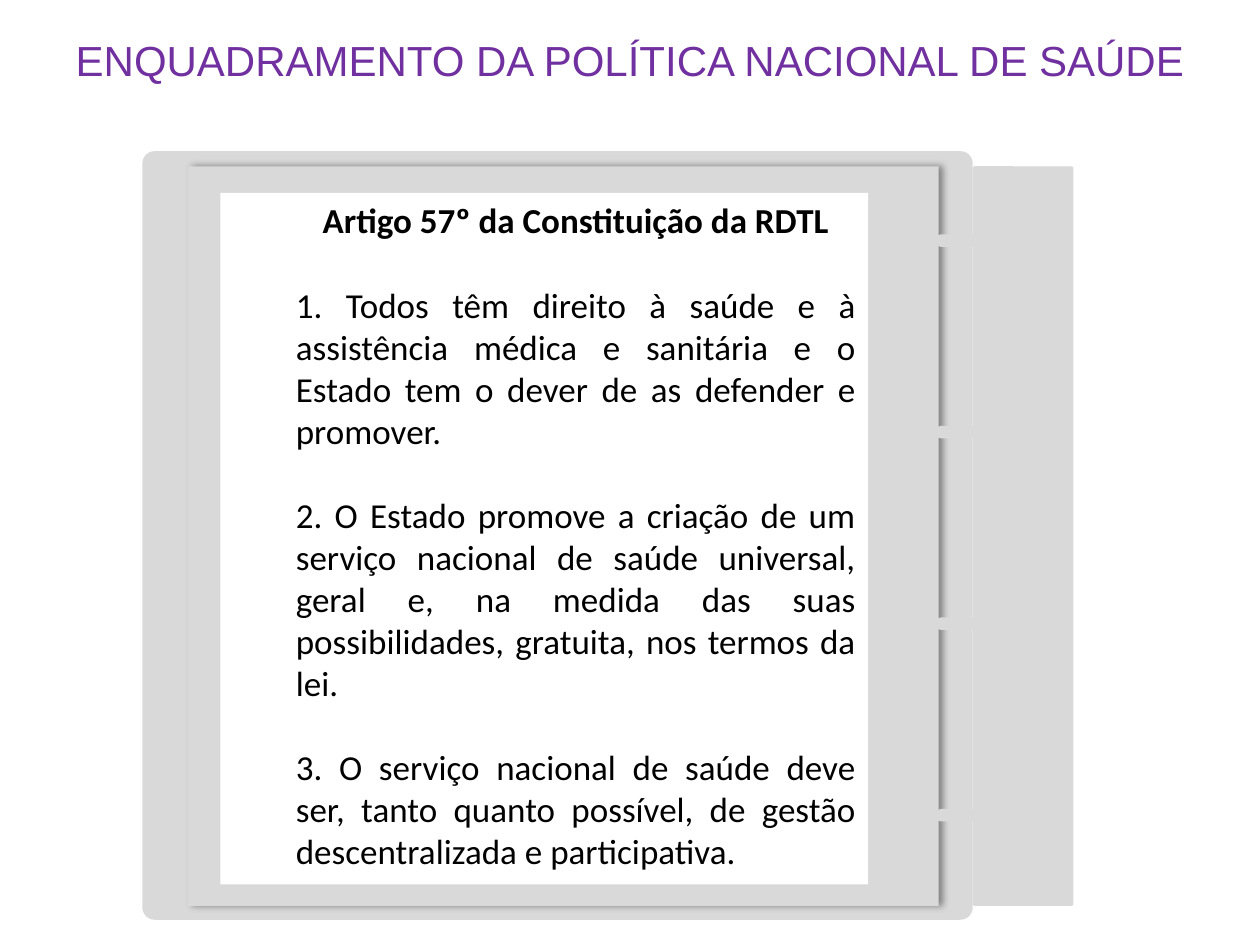
import pptx
import pptx.util
import pptx.dml.color
import pptx.enum.shapes
import pptx.enum.text
import pptx.oxml
import pptx.oxml.ns
from pptx.util import Inches, Pt

GREY = pptx.dml.color.RGBColor(0xD9, 0xD9, 0xD9)
WHITE = pptx.dml.color.RGBColor(0xFF, 0xFF, 0xFF)
BLACK = pptx.dml.color.RGBColor(0x00, 0x00, 0x00)
PURPLE = pptx.dml.color.RGBColor(0x70, 0x30, 0xA0)
RECT = pptx.enum.shapes.MSO_SHAPE.RECTANGLE
ROUNDED = pptx.enum.shapes.MSO_SHAPE.ROUNDED_RECTANGLE
ALIGN = pptx.enum.text.PP_ALIGN


def add_panel(group, kind, x, y, w, h, radius=None):
    sp = group.shapes.add_shape(kind, Inches(x), Inches(y), Inches(w), Inches(h))
    sp.shadow.inherit = False
    sp.fill.solid()
    sp.fill.fore_color.rgb = GREY
    sp.line.fill.background()
    if radius is not None:
        sp.adjustments[0] = radius
    return sp


def make_shadow(blur, dist, angle):
    return pptx.oxml.parse_xml(
        f'<a:outerShdw {pptx.oxml.ns.nsdecls("a")} blurRad="{Pt(blur)}" '
        f'dist="{Pt(dist)}" dir="{angle * 60000}" algn="l" rotWithShape="0">'
        '<a:srgbClr val="000000"><a:alpha val="40000"/></a:srgbClr></a:outerShdw>'
    )


prs = pptx.Presentation()
prs.slide_width = Inches(10)
prs.slide_height = Inches(7.5)
s = prs.slides.add_slide(prs.slide_layouts[5])

notebook = s.shapes.add_group_shape()
add_panel(notebook, ROUNDED, 1.13, 1.2, 6.59, 6.1, 0.016)
page = add_panel(notebook, RECT, 1.49, 1.32, 5.96, 5.87)
page.element.spPr.find(pptx.oxml.ns.qn("a:effectLst")).append(make_shadow(4, 3, 0))

binding = s.shapes.add_group_shape()
add_panel(binding, ROUNDED, 7.72, 1.32, 0.8, 5.87, 0.022)
for i in range(4):
    add_panel(binding, ROUNDED, 7.42, 1.86 + 1.52 * i, 0.8, 0.1, 0.5)

article = [
    ("Artigo 57º da Constituição da RDTL", True, ALIGN.CENTER),
    ("1. Todos têm direito à saúde e à assistência médica e sanitária e o Estado "
     "tem o dever de as defender e promover.", False, ALIGN.JUSTIFY),
    ("2. O Estado promove a criação de um serviço nacional de saúde universal, "
     "geral e, na medida das suas possibilidades, gratuita, nos termos da lei.",
     False, ALIGN.JUSTIFY),
    ("3. O serviço nacional de saúde deve ser, tanto quanto possível, de gestão "
     "descentralizada e participativa.", False, ALIGN.JUSTIFY),
]
sp = s.shapes.add_textbox(Inches(1.75), Inches(1.53), Inches(5.14), Inches(5.49))
sp.fill.solid()
sp.fill.fore_color.rgb = WHITE
tf = sp.text_frame
tf.word_wrap = True
for i, (text, bold, align) in enumerate(article):
    p = tf.paragraphs[0] if i == 0 else tf.add_paragraph()
    p.alignment = align
    p.level = 1
    p.space_before = Pt(24 if i else 0)
    pPr = p._p.get_or_add_pPr()
    pPr.set("marL", str(Inches(0.5)))
    pPr.set("indent", "0")
    r = p.add_run()
    r.text = text
    r.font.size = Pt(20)
    r.font.name = "Calibri"
    r.font.bold = bold
    r.font.color.rgb = BLACK

title = s.shapes.title
title.left, title.top = Inches(0), Inches(0.07)
title.width, title.height = Inches(10), Inches(0.81)
tf = title.text_frame
tf.word_wrap = True
tf.vertical_anchor = pptx.enum.text.MSO_ANCHOR.MIDDLE
p = tf.paragraphs[0]
p.alignment = ALIGN.CENTER
r = p.add_run()
r.text = "ENQUADRAMENTO DA POLÍTICA NACIONAL DE SAÚDE"
r.font.size = Pt(24)
r.font.name = "Arial"
r.font.color.rgb = PURPLE
effects = pptx.oxml.parse_xml(f'<a:effectLst {pptx.oxml.ns.nsdecls("a")}/>')
effects.append(make_shadow(4, 3, 90))
r.font._element.find(pptx.oxml.ns.qn("a:solidFill")).addnext(effects)

s.shapes._spTree.append(title.element)

prs.save("out.pptx")
